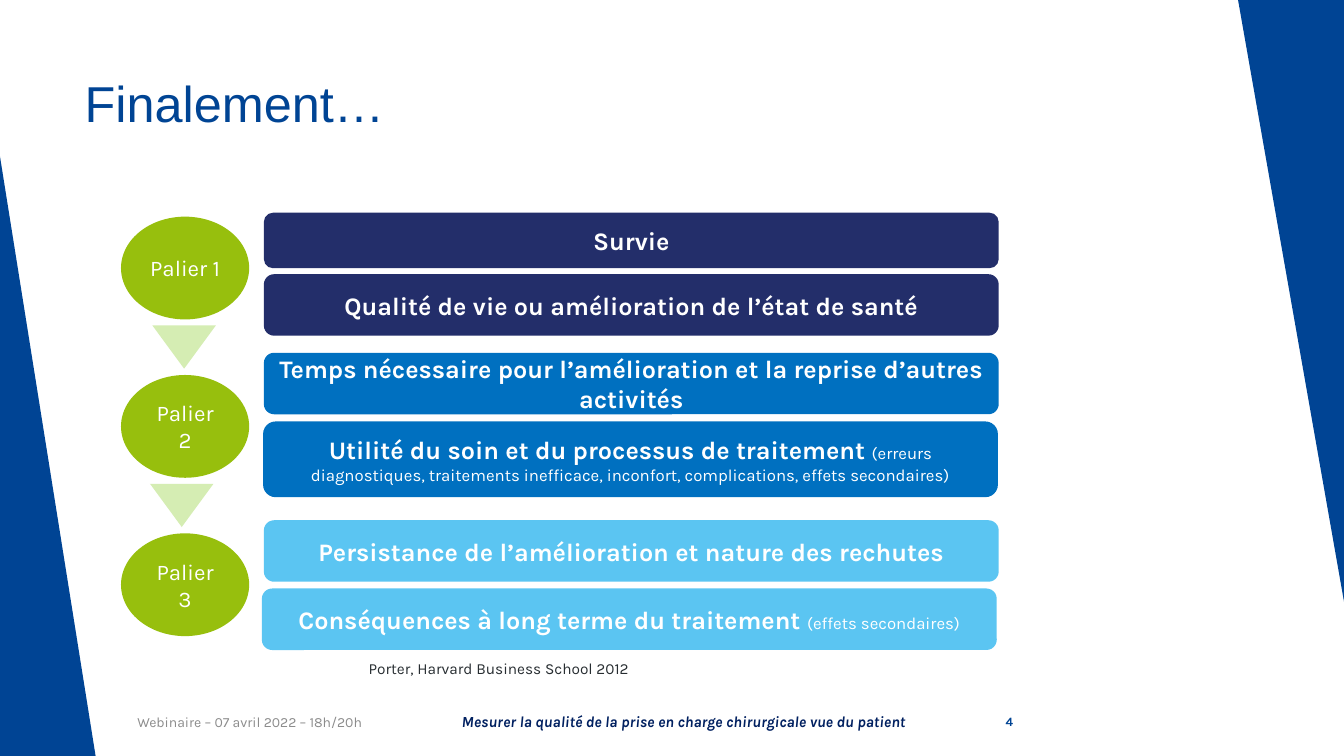
from pptx import Presentation
from pptx.dml.color import RGBColor
from pptx.enum.shapes import MSO_SHAPE
from pptx.enum.text import MSO_ANCHOR, PP_ALIGN
from pptx.util import Cm, Pt

RIGHT_TRIANGLE = MSO_SHAPE.RIGHT_TRIANGLE
TRIANGLE = MSO_SHAPE.ISOSCELES_TRIANGLE
ROUNDED = MSO_SHAPE.ROUNDED_RECTANGLE
OVAL = MSO_SHAPE.OVAL
TOP, MIDDLE = MSO_ANCHOR.TOP, MSO_ANCHOR.MIDDLE
LEFT, CENTER, RIGHT = PP_ALIGN.LEFT, PP_ALIGN.CENTER, PP_ALIGN.RIGHT

BRAND_BLUE = RGBColor(0x00, 0x44, 0x94)
FOOTER_BLUE = RGBColor(0x00, 0x20, 0x60)
NAVY = RGBColor(0x23, 0x2E, 0x6A)
BLUE = RGBColor(0x00, 0x70, 0xC0)
SKY = RGBColor(0x5B, 0xC5, 0xF2)
GREEN = RGBColor(0x97, 0xBF, 0x0D)
PALE_GREEN = RGBColor(0xD5, 0xED, 0xB3)
GREY = RGBColor(0x8C, 0x8C, 0x8C)
DARK = RGBColor(0x27, 0x2D, 0x31)
WHITE = RGBColor(0xFF, 0xFF, 0xFF)

FONT = "Karla"
TIER_TOP, TIER_PITCH = 5.46, 3.99
ARROW_TOP = 8.2
ARROW_LEFTS = [3.84, 3.78]
BAR_WIDTH = 18.52

BARS = [
    (6.65, 5.36, 1.4, NAVY, "Survie", ""),
    (6.65, 6.91, 1.55, NAVY, "Qualité de vie ou amélioration de l’état de santé", ""),
    (6.65, 8.89, 1.55, BLUE,
     "Temps nécessaire pour l’amélioration et la reprise d’autres activités", ""),
    (6.63, 10.62, 1.91, BLUE, "Utilité du soin et du processus de traitement ",
     "(erreurs diagnostiques, traitements inefficace, inconfort, "
     "complications, effets secondaires)"),
    (6.65, 13.11, 1.55, SKY, "Persistance de l’amélioration et nature des rechutes", ""),
    (6.6, 14.83, 1.55, SKY, "Conséquences à long terme du traitement ",
     "(effets secondaires)"),
]


def set_font(font, size, color, bold=False, italic=False, name=FONT):
    font.name = name
    font.size = Pt(size)
    font.color.rgb = color
    font.bold = bold
    font.italic = italic


def add_filled_shape(slide, kind, left, top, width, height, color, rotation=0):
    shape = slide.shapes.add_shape(kind, Cm(left), Cm(top), Cm(width), Cm(height))
    shape.shadow.inherit = False
    shape.fill.solid()
    shape.fill.fore_color.rgb = color
    shape.line.fill.background()
    shape.rotation = rotation
    return shape


def add_text(slide, text, left, top, width, height, size, color,
             alignment=CENTER, anchor=MIDDLE, bold=False, italic=False):
    box = slide.shapes.add_textbox(Cm(left), Cm(top), Cm(width), Cm(height))
    frame = box.text_frame
    frame.word_wrap = True
    frame.vertical_anchor = anchor
    paragraph = frame.paragraphs[0]
    paragraph.text = text
    paragraph.alignment = alignment
    set_font(paragraph.font, size, color, bold, italic)


def add_title(slide, text):
    title = slide.shapes.title
    title.left, title.top = Cm(1.88), Cm(1.7)
    title.width, title.height = Cm(23.88), Cm(3.66)
    title.text_frame.vertical_anchor = TOP
    paragraph = title.text_frame.paragraphs[0]
    paragraph.text = text
    paragraph.alignment = LEFT
    set_font(paragraph.font, 36, BRAND_BLUE, name="Arial")


def add_bar(slide, left, top, height, color, outcome, detail):
    bar = add_filled_shape(slide, ROUNDED, left, top, BAR_WIDTH, height, color)
    bar.text_frame.vertical_anchor = MIDDLE
    paragraph = bar.text_frame.paragraphs[0]
    paragraph.alignment = CENTER
    if detail:
        for text, size, bold in ((outcome, 18, True), (detail, 12, False)):
            run = paragraph.add_run()
            run.text = text
            set_font(run.font, size, WHITE, bold)
    else:
        paragraph.text = outcome
        set_font(paragraph.font, 18, WHITE, bold=True)


def add_tier(slide, index):
    top = TIER_TOP + index * TIER_PITCH
    tier = add_filled_shape(slide, OVAL, 3.05, top, 3.23, 2.59, GREEN)
    tier.text_frame.vertical_anchor = MIDDLE
    paragraph = tier.text_frame.paragraphs[0]
    paragraph.text = f"Palier {index + 1}"
    paragraph.alignment = CENTER
    set_font(paragraph.font, 16, WHITE)


def main():
    presentation = Presentation()
    presentation.slide_width = Cm(33.87)
    presentation.slide_height = Cm(19.05)
    slide = presentation.slides.add_slide(presentation.slide_layouts[5])

    add_filled_shape(slide, RIGHT_TRIANGLE, 0, 3.94, 2.41, 15.11, BRAND_BLUE)
    add_filled_shape(slide, RIGHT_TRIANGLE, 31.2, 0, 2.67, 15.16, BRAND_BLUE, 180)
    add_title(slide, "Finalement…")

    for bar in BARS:
        add_bar(slide, *bar)
    for index in range(3):
        add_tier(slide, index)
    for index, left in enumerate(ARROW_LEFTS):
        top = ARROW_TOP + index * TIER_PITCH
        add_filled_shape(slide, TRIANGLE, left, top, 1.6, 1.09, PALE_GREEN, 180)

    add_text(slide, "Porter, Harvard Business School 2012",
             9.04, 16.48, 8.79, 0.74, 11, DARK, LEFT, TOP)
    add_text(slide, "Webinaire – 07 avril 2022 – 18h/20h",
             2.62, 17.68, 7.34, 1.02, 10, GREY)
    add_text(slide, "Mesurer la qualité de la prise en charge chirurgicale vue du patient",
             10.57, 17.68, 13.34, 1.02, 11, FOOTER_BLUE, bold=True, italic=True)
    add_text(slide, "4", 23.88, 17.68, 1.9, 1.02, 9, BRAND_BLUE, RIGHT, bold=True)

    presentation.save("out.pptx")


if __name__ == "__main__":
    main()
